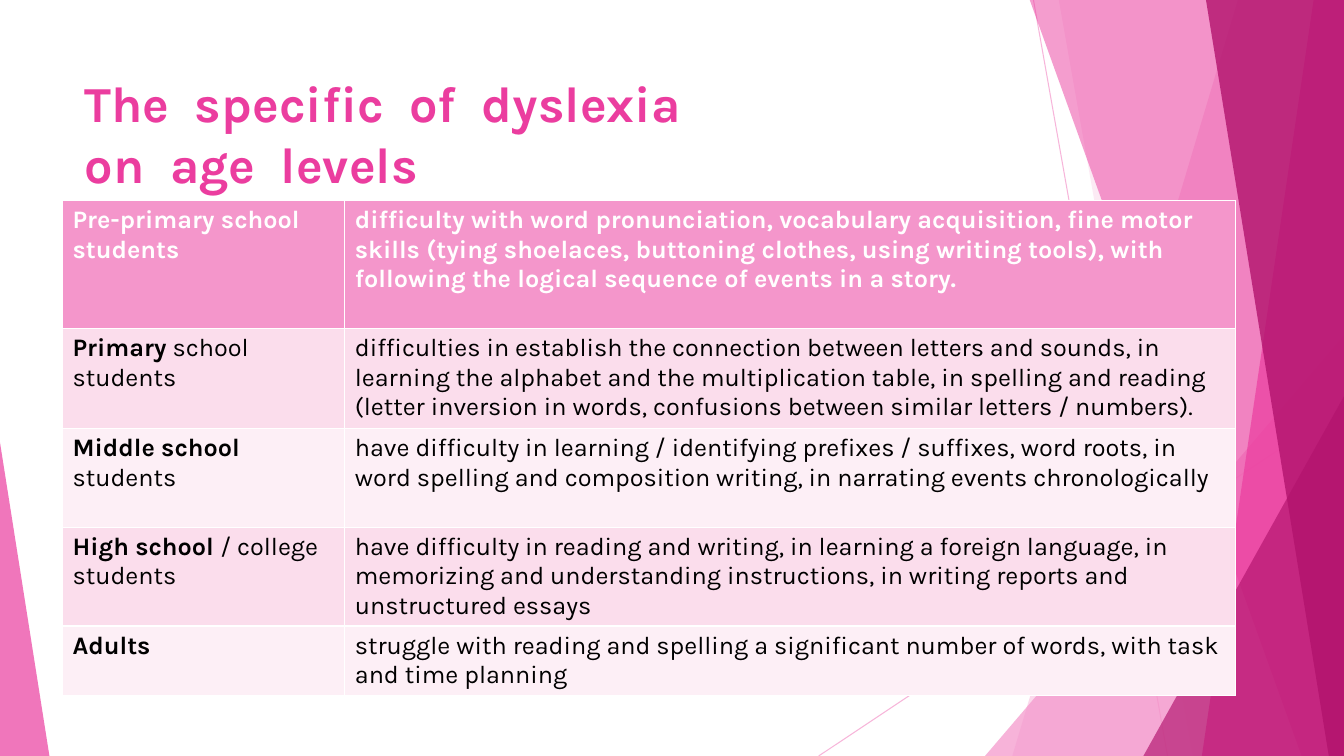
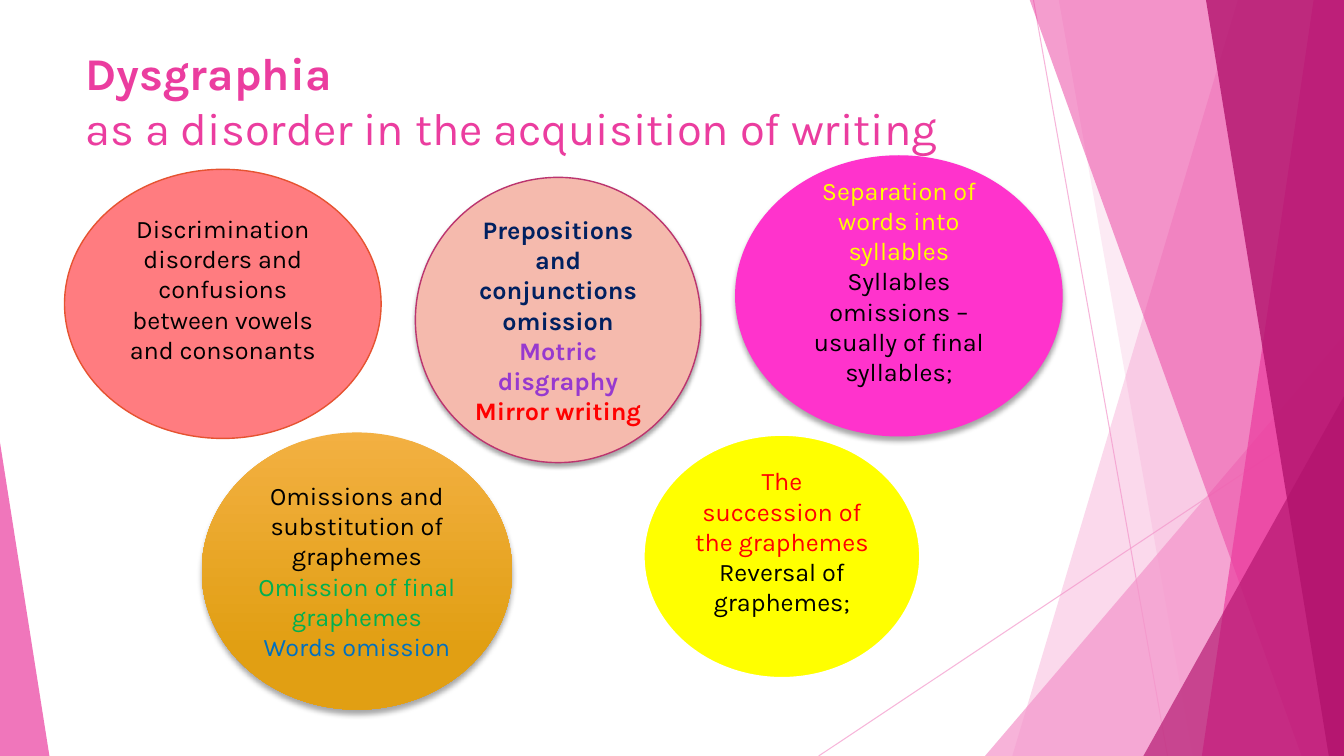
from lxml import etree
from pptx import Presentation
from pptx.dml.color import RGBColor
from pptx.enum import shapes, text
from pptx.oxml import ns
from pptx.util import Inches, Pt

HUE = {
    "pink": "F496CB", "rose": "EB3D9F", "plum": "B2136D", "white": "FFFFFF",
    "black": "000000", "blush": "FBDDEC", "pale": "FDEFF6", "coral": "FF7C80",
    "rust": "E65331", "peach": "F5BAAD", "wine": "BC356F", "hot": "FF33CC",
    "amber": "F3B042", "gold": "E19F13", "yellow": "FFFF00", "navy": "002060",
    "violet": "9739CF", "red": "FF0000", "green": "00B050", "blue": "0070C0",
}
RGB = {name: RGBColor.from_string(code) for name, code in HUE.items()}
BASE = {"name": "Karla", "size": Pt(18), "bold": False}


def write(frame, paras, look):
    """Fill a frame; each paragraph is a list of (words, hue, bold) runs."""
    for i, runs in enumerate(paras):
        para = frame.paragraphs[0] if i == 0 else frame.add_paragraph()
        for words, hue, bold in runs:
            if words == "\n":
                para.add_line_break()
                continue
            run = para.add_run()
            run.text = words
            for key, value in {**BASE, **look, "bold": bold}.items():
                setattr(run.font, key, value)
            run.font.color.rgb = RGB[hue]


def head(slide, place, size, runs):
    """Place and fill the slide title."""
    title = slide.shapes.title
    title.left, title.top, title.width, title.height = map(Inches, place)
    frame = title.text_frame
    for key, value in {"word_wrap": True, "auto_size": text.MSO_AUTO_SIZE.NONE,
                       "vertical_anchor": text.MSO_ANCHOR.TOP}.items():
        setattr(frame, key, value)
    write(frame, [runs], {"size": Pt(size)})
    frame.paragraphs[0].alignment = text.PP_ALIGN.LEFT
    for br in title.element.xpath(".//a:br"):
        etree.SubElement(br, ns.qn("a:rPr"), sz=str(round(size * 100)))
    return title


prs = Presentation()
prs.slide_width, prs.slide_height = Inches(13.33), Inches(7.5)
layout = prs.slide_layouts[5]
ages = prs.slides.add_slide(layout)

# Shared backdrop: facets drawn once, then moved to the layout
FACETS = [
    ("line", (10.25, 0, 11.58, 7.5), "pink", 70),
    ("line", (13.33, 4.03, 8.12, 7.5), "pink", 70),
    ("band", (12.28, 10.04), "pink", 36),
    ("band", (10.5, 11.83), "pink", 20),
    ("right", (9.77, 3.33, 3.56, 4.17), "pink", 72),
    ("band", (10.21, 12.91), "rose", 50),
    ("band", (13.03, 11.92), "rose", 70),
    ("band", (11.96, 13.18), "plum", 80),
    ("right", (11.34, 3.93, 1.99, 3.57), "plum", 66),
    ("left", (0, 4.39, 0.49, 3.11), "rose", 70),
]
tree = layout.shapes.element
for i, (kind, place, hue, alpha) in enumerate(FACETS):
    if kind == "line":
        facet = ages.shapes.add_connector(
            shapes.MSO_CONNECTOR.STRAIGHT, *map(Inches, place))
        facet.line.width = Pt(0.75)
        facet.line.color.rgb = RGB[hue]
        etree.SubElement(facet.element.spPr, ns.qn("a:effectLst"))
    else:
        if kind == "band":
            top, foot = place
            pen = ages.shapes.build_freeform(Inches(top), Inches(-0.01))
            ends = [(13.33, -0.01), (13.33, 7.5), (foot, 7.5)]
            pen.add_line_segments([(Inches(x), Inches(y)) for x, y in ends])
            facet = pen.convert_to_shape()
        else:
            facet = ages.shapes.add_shape(
                shapes.MSO_SHAPE.ISOSCELES_TRIANGLE, *map(Inches, place))
            facet.adjustments[0] = 1 if kind == "right" else 0
        facet.fill.solid()
        facet.fill.fore_color.rgb = RGB[hue]
        facet.line.fill.background()
        facet.shadow.inherit = False
    for tint in facet.element.xpath(".//a:solidFill/a:srgbClr"):
        etree.SubElement(tint, ns.qn("a:alpha"), val=str(alpha * 1000))
    facet.element.xpath(".//p:cNvPr")[0].set("id", str(100 + i))
    tree.insert(2 + i, facet.element)

# Slide 1: wide word gaps in the title come from character spacing
words = "The| |specific| |of| |dyslexia|\n|on| |age| |levels".split("|")
title = head(ages, (0.74, 0.67, 9.4, 1.44), 36, [(w, "rose", True) for w in words])
for gap in title.element.xpath('.//a:r[a:t=" "]/a:rPr'):
    gap.set("spc", "900")

# Age table: height, fill, bold lead, plain rest, difficulty
ROWS = [
    (1.27, "pink", "Pre-primary school students", "",
     "difficulty with word pronunciation, vocabulary acquisition, fine motor "
     "skills (tying shoelaces, buttoning clothes, using writing tools), with "
     "following the logical sequence of events in a story."),
    (0.99, "blush", "Primary", " school students",
     "difficulties in establish the connection between letters and sounds, in "
     "learning the alphabet and the multiplication table, in spelling and reading "
     "(letter inversion in words, confusions between similar letters / numbers)."),
    (0.98, "pale", "Middle school ", "students",
     "have difficulty in learning / identifying prefixes / suffixes, word roots, in "
     "word spelling and composition writing, in narrating events chronologically"),
    (0.98, "blush", "High school ", "/ college students",
     "have difficulty in reading and writing, in learning a foreign language, in "
     "memorizing and understanding instructions, in writing reports and "
     "unstructured essays"),
    (0.68, "pale", "Adults", "",
     "struggle with reading and spelling a significant number of words, with task "
     "and time planning"),
]
grid = ages.shapes.add_table(len(ROWS), 2, *map(Inches, (0.62, 1.99, 11.63, 4.9))).table
for col, width in zip(grid.columns, (2.8, 8.83)):
    col.width = Inches(width)
for i, (height, fill, lead, rest, need) in enumerate(ROWS):
    grid.rows[i].height = Inches(height)
    ink = "white" if i == 0 else "black"
    who = [(lead, ink, True)] + ([(rest, ink, False)] if rest else [])
    for j, runs in enumerate((who, [(need, ink, i == 0)])):
        cell = grid.cell(i, j)
        cell.fill.solid()
        cell.fill.fore_color.rgb = RGB[fill]
        write(cell.text_frame, [runs], {})

# Slide 2: title
signs = prs.slides.add_slide(layout)
head(signs, (0.75, 0.4, 9.4, 1.44), 32.4, [
    ("Dysgraphia", "rose", True), ("\n", "rose", True),
    ("as a disorder in the acquisition of writing", "rose", False)])

# Ovals: place, fills, line, shadow (blur, distance), foot inset, bold, paragraphs
OVALS = [
    ((0.64, 1.68, 3.14, 2.67), ["coral"], ("rust", 1), None, 0.35, False, [
        ("Discrimination disorders and confusions between vowels and consonants",
         "black")]),
    ((4.12, 1.76, 2.83, 2.83), ["peach"], ("wine", 1), (3, 2), 0.05, True, [
        ("Prepositions and conjunctions omission", "navy"),
        ("Motric disgraphy", "violet"), ("Mirror writing", "red")]),
    ((7.29, 1.54, 3.25, 2.79), ["hot"], None, (4, 3), 0.35, False, [
        ("Separation of words into syllables", "yellow"),
        ("Syllables omissions – usually of final syllables;", "black")]),
    ((2, 4.29, 3.08, 2.75), ["amber", "gold"], None, (4, 3), 0.05, False, [
        ("Omissions and substitution of graphemes", "black"),
        ("Omission of final graphemes", "green"), ("Words omission", "blue")]),
    ((6.38, 4.31, 2.75, 2.42), ["yellow"], ("white", 2), None, 0.35, False, [
        ("The succession of the graphemes", "red"),
        ("Reversal of graphemes;", "black")]),
]
for place, fills, edge, shade, foot, bold, lines in OVALS:
    oval = signs.shapes.add_shape(shapes.MSO_SHAPE.OVAL, *map(Inches, place))
    if len(fills) == 1:
        oval.fill.solid()
        oval.fill.fore_color.rgb = RGB[fills[0]]
    else:
        oval.fill.gradient()
        oval.fill.gradient_angle = 270
        for stop, hue, spot in zip(oval.fill.gradient_stops, fills, (0, 0.78)):
            stop.color.rgb = RGB[hue]
            stop.position = spot
    if edge:
        oval.line.color.rgb = RGB[edge[0]]
        oval.line.width = Pt(edge[1])
    else:
        oval.line.fill.background()
    oval.shadow.inherit = False
    if shade:
        blur, far = (str(Pt(size)) for size in shade)
        drop = etree.SubElement(
            oval.element.xpath(".//a:effectLst")[0], ns.qn("a:outerShdw"),
            blurRad=blur, dist=far, dir="5400000", rotWithShape="0")
        tint = etree.SubElement(drop, ns.qn("a:srgbClr"), val=HUE["black"])
        etree.SubElement(tint, ns.qn("a:alpha"), val="35000")
    frame = oval.text_frame
    frame.word_wrap = True
    frame.vertical_anchor = text.MSO_ANCHOR.MIDDLE
    frame.margin_bottom = Inches(foot)
    write(frame, [[(line, hue, bold)] for line, hue in lines], {})
    for para in frame.paragraphs:
        para.alignment = text.PP_ALIGN.CENTER

prs.save("out.pptx")
